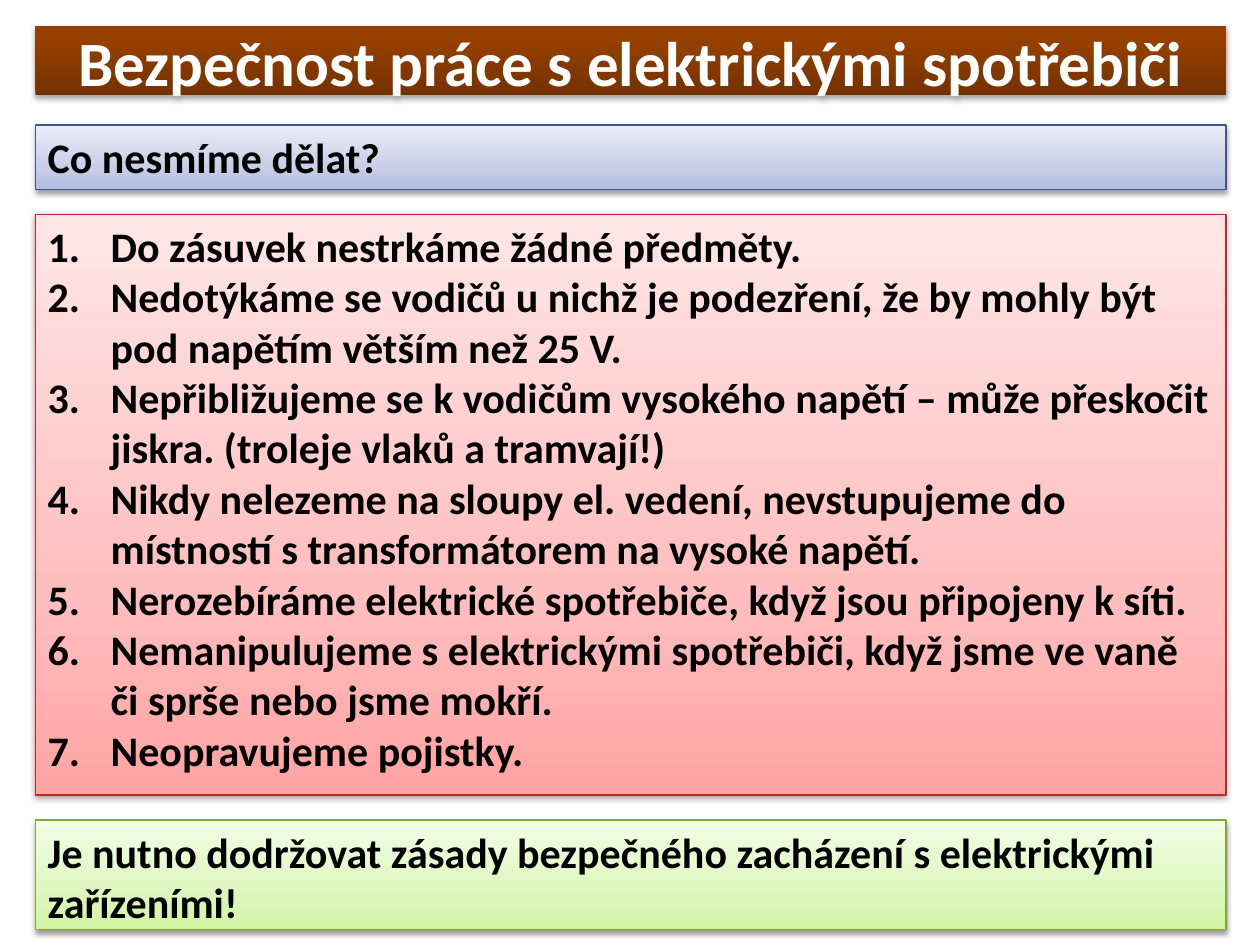
from copy import deepcopy

from lxml import etree
from pptx import Presentation
from pptx import util as u
from pptx.dml.color import RGBColor
from pptx.enum import shapes, text
from pptx.oxml.ns import qn

LEFT, WIDTH = 20.16, 680.4
RULES = [
    "Do zásuvek nestrkáme žádné předměty.",
    "Nedotýkáme se vodičů u nichž je podezření, že by mohly být pod napětím větším než 25 V.",
    "Nepřibližujeme se k vodičům vysokého napětí – může přeskočit jiskra. (troleje vlaků a tramvají!)",
    "Nikdy nelezeme na sloupy el. vedení, nevstupujeme do místností s transformátorem na vysoké napětí.",
    "Nerozebíráme elektrické spotřebiče, když jsou připojeny k síti.",
    "Nemanipulujeme s elektrickými spotřebiči, když jsme ve vaně či sprše nebo jsme mokří.",
    "Neopravujeme pojistky.",
]


def color(value):
    return RGBColor.from_string(value)


class SafetySlide:
    font = "Calibri"

    def __init__(self, presentation):
        self.slide = presentation.slides.add_slide(presentation.slide_layouts[6])

    def panel(self, top, height, gradient, middle_stop=0.35, line=None, shadow=(38, 1.6)):
        shape = self.slide.shapes.add_shape(
            shapes.MSO_SHAPE.RECTANGLE, u.Pt(LEFT), u.Pt(top), u.Pt(WIDTH), u.Pt(height))
        self.gradient(shape, gradient, middle_stop)
        if line:
            shape.line.color.rgb = color(line)
            shape.line.width = u.Pt(0.75)
        else:
            shape.line.fill.background()
        self.shadow(shape, *shadow)
        return shape

    def gradient(self, shape, colors, middle_stop):
        shape.fill.gradient()
        shape.fill.gradient_angle = 90
        stops = shape.element.spPr.find(".//" + qn("a:gsLst"))
        stops.append(deepcopy(stops[0]))
        for stop, value, position in zip(shape.fill.gradient_stops, colors, (0, middle_stop, 1)):
            stop.color.rgb = color(value)
            stop.position = position

    def shadow(self, shape, opacity, distance):
        shape.shadow.inherit = False
        effects = shape.element.spPr.find(qn("a:effectLst"))
        outer = etree.SubElement(
            effects, qn("a:outerShdw"), blurRad=str(u.Pt(3.1)), dist=str(u.Pt(distance)),
            dir="5400000", rotWithShape="0")
        black = etree.SubElement(outer, qn("a:srgbClr"), val="000000")
        etree.SubElement(black, qn("a:alpha"), val=str(opacity * 1000))

    def label(self, shape, lines, size=24, ink="000000", align=text.PP_ALIGN.LEFT,
              anchor=text.MSO_ANCHOR.TOP, numbered=False):
        frame = shape.text_frame
        frame.word_wrap = True
        frame.vertical_anchor = anchor
        frame.text = "\n".join(lines)
        for paragraph in frame.paragraphs:
            paragraph.alignment = align
            paragraph.font.name = self.font
            paragraph.font.size = u.Pt(size)
            paragraph.font.bold = True
            paragraph.font.color.rgb = color(ink)
            if numbered:
                self.number(paragraph)

    def number(self, paragraph):
        properties = paragraph._p.get_or_add_pPr()
        properties.set("marL", str(u.Pt(36)))
        properties.set("indent", str(-u.Pt(36)))
        properties.insert(0, etree.Element(qn("a:buFont"), typeface="+mj-lt"))
        properties.insert(1, etree.Element(qn("a:buAutoNum"), type="arabicPeriod"))


def main():
    presentation = Presentation()
    presentation.slide_width, presentation.slide_height = u.Pt(720), u.Pt(540)
    safety = SafetySlide(presentation)

    title = safety.panel(15, 39.6, ("743100", "964000", "974100"), 0.8, shadow=(35, 1.8))
    safety.label(title, ["Bezpečnost práce s elektrickými spotřebiči"], 36, "FFFFFF",
                 text.PP_ALIGN.CENTER, text.MSO_ANCHOR.MIDDLE)

    question = safety.panel(71.5, 36.7, ("B2BBE0", "C9CFE8", "EAECF7"), line="44578C")
    safety.label(question, ["Co nesmíme dělat?"])

    rules = safety.panel(122.4, 332, ("FFA3A3", "FFBEBE", "FFE6E6"), line="C22829")
    safety.label(rules, RULES, numbered=True)

    conclusion = safety.panel(468.6, 62.6, ("D0F5A3", "DDF7BF", "F2FDE6"), line="82A92F")
    safety.label(conclusion, [
        "Je nutno dodržovat zásady bezpečného zacházení s elektrickými zařízeními!"])

    presentation.save("out.pptx")


if __name__ == "__main__":
    main()
